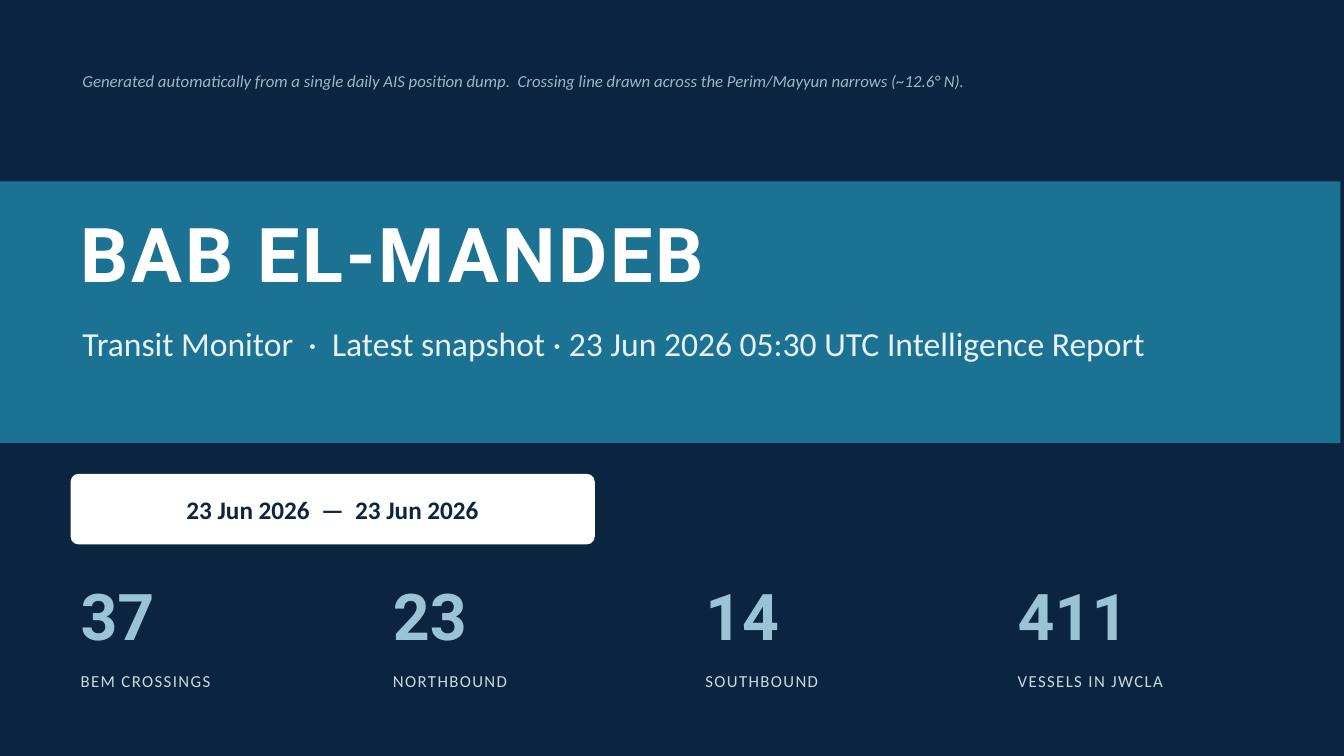
from dataclasses import dataclass

from pptx import Presentation
from pptx.dml.color import RGBColor
from pptx.enum.shapes import MSO_SHAPE
from pptx.enum.text import MSO_ANCHOR, PP_ALIGN
from pptx.util import Cm, Pt

RECTANGLE = MSO_SHAPE.RECTANGLE
ROUNDED = MSO_SHAPE.ROUNDED_RECTANGLE
MIDDLE = MSO_ANCHOR.MIDDLE
LEFT, CENTER = PP_ALIGN.LEFT, PP_ALIGN.CENTER


@dataclass(frozen=True)
class TextStyle:
    size: int
    color: str
    font: str = "Calibri"
    bold: bool = False
    italic: bool = False
    tracking: int = 0  # points between letters


@dataclass(frozen=True)
class Theme:
    background: str = "0B2440"
    band: str = "1C7293"
    pill: str = "FFFFFF"
    title: TextStyle = TextStyle(54, "FFFFFF", "Roboto", bold=True, tracking=2)
    subtitle: TextStyle = TextStyle(24, "E8F1F5")
    period: TextStyle = TextStyle(18, "0B2440", bold=True)
    figure: TextStyle = TextStyle(46, "9AC4D6", "Roboto", bold=True)
    label: TextStyle = TextStyle(12, "C9D9E2", tracking=1)
    note: TextStyle = TextStyle(12, "9FB6C4", italic=True)


@dataclass(frozen=True)
class Box:
    """A region in centimetres."""
    left: float
    top: float
    width: float
    height: float

    def inner(self, dx, dy, width, height):
        return Box(self.left + dx, self.top + dy, width, height)

    def lengths(self):
        return Cm(self.left), Cm(self.top), Cm(self.width), Cm(self.height)


THEME = Theme()
SLIDE_WIDTH, SLIDE_HEIGHT = 33.87, 19.05
MARGIN = 1.78
TEXT_WIDTH = 30.23

STATS = [
    ("37", "BEM CROSSINGS"),
    ("23", "NORTHBOUND"),
    ("14", "SOUTHBOUND"),
    ("411", "VESSELS IN JWCLA"),
]


def write(shape, text, style, align=LEFT):
    frame = shape.text_frame
    frame.word_wrap = True
    frame.vertical_anchor = MIDDLE
    frame.text = text
    paragraph = frame.paragraphs[0]
    paragraph.alignment = align
    run = paragraph.runs[0]
    run.font.name = style.font
    run.font.size = Pt(style.size)
    run.font.bold = style.bold
    run.font.italic = style.italic
    run.font.color.rgb = RGBColor.from_string(style.color)
    if style.tracking:
        run._r.get_or_add_rPr().set("spc", str(style.tracking * 100))


def add_text(slide, box, text, style):
    write(slide.shapes.add_textbox(*box.lengths()), text, style)


def add_panel(slide, box, preset, color):
    panel = slide.shapes.add_shape(preset, *box.lengths())
    panel.shadow.inherit = False
    panel.fill.solid()
    panel.fill.fore_color.rgb = RGBColor.from_string(color)
    panel.line.fill.background()
    return panel


def add_title_band(slide, box, title, subtitle):
    add_panel(slide, box, RECTANGLE, THEME.band)
    add_text(slide, box.inner(MARGIN, 0.38, TEXT_WIDTH, 2.79), title, THEME.title)
    add_text(slide, box.inner(MARGIN + 0.05, 3.18, TEXT_WIDTH, 1.78),
             subtitle, THEME.subtitle)


def add_period_pill(slide, box, period):
    pill = add_panel(slide, box, ROUNDED, THEME.pill)
    pill.adjustments[0] = 0.114
    write(pill, period, THEME.period, CENTER)


def add_stats(slide, box, stats, gap=0.63):
    """Spread the figures, each above its label, evenly across the box."""
    width = (box.width - gap * (len(stats) - 1)) / len(stats)
    figure_height = 2.29
    for column, (figure, label) in enumerate(stats):
        dx = column * (width + gap)
        add_text(slide, box.inner(dx, 0, width, figure_height),
                 figure, THEME.figure)
        add_text(slide, box.inner(dx, figure_height, width, box.height - figure_height),
                 label, THEME.label)


def build_cover(slide):
    slide.background.fill.solid()
    slide.background.fill.fore_color.rgb = RGBColor.from_string(THEME.background)
    add_title_band(
        slide, Box(0, 4.57, 33.78, 6.6), "BAB EL-MANDEB",
        "Transit Monitor  ·  Latest snapshot · 23 Jun 2026 05:30 UTC Intelligence Report")
    add_period_pill(slide, Box(MARGIN, 11.94, 13.21, 1.78),
                    "23 Jun 2026  —  23 Jun 2026")
    add_stats(slide, Box(MARGIN, 14.35, 30.86, 3.31), STATS)
    add_text(
        slide, Box(MARGIN + 0.05, 1.4, TEXT_WIDTH, 1.27),
        "Generated automatically from a single daily AIS position dump.  "
        "Crossing line drawn across the Perim/Mayyun narrows (~12.6° N).",
        THEME.note)


def main():
    deck = Presentation()
    deck.slide_width, deck.slide_height = Cm(SLIDE_WIDTH), Cm(SLIDE_HEIGHT)
    blank = deck.slide_layouts[6]
    build_cover(deck.slides.add_slide(blank))
    deck.save("out.pptx")


if __name__ == "__main__":
    main()
